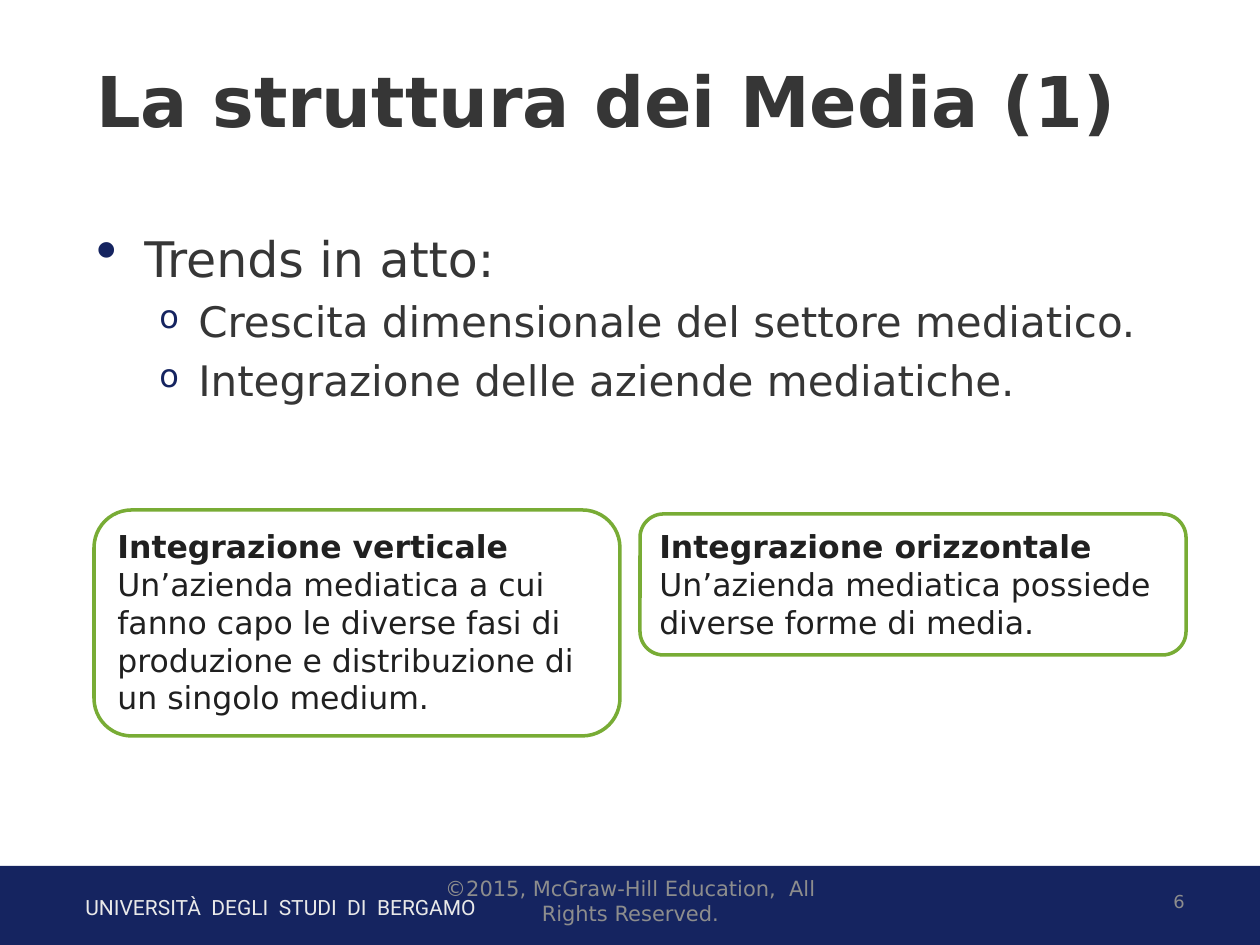
from lxml.etree import SubElement
from pptx import Presentation
from pptx.dml.color import RGBColor
from pptx.enum.shapes import MSO_SHAPE
from pptx.enum.text import MSO_ANCHOR, PP_ALIGN
from pptx.oxml.ns import qn
from pptx.util import Emu, Pt

NAVY = RGBColor(0x15, 0x24, 0x60)
GREEN = RGBColor(0x78, 0xAC, 0x35)
WHITE = RGBColor(0xFF, 0xFF, 0xFF)
CHARCOAL = RGBColor(0x36, 0x36, 0x36)
INK = RGBColor(0x20, 0x20, 0x20)
GREY = RGBColor(0x8D, 0x8D, 0x8D)
PALE = RGBColor(0xE9, 0xE9, 0xE9)

FONT = "DejaVu Sans"
PX_PER_INCH = 126


def px(length):
    return Emu(round(length * 914400 / PX_PER_INCH))


def add_box(page, left, top, width, height, anchor=MSO_ANCHOR.TOP):
    box = page.shapes.add_textbox(px(left), px(top), px(width), px(height))
    box.text_frame.word_wrap = True
    box.text_frame.vertical_anchor = anchor
    return box


def add_panel(page, kind, left, top, width, height, fill, line=None):
    panel = page.shapes.add_shape(kind, px(left), px(top), px(width), px(height))
    panel.shadow.inherit = False
    panel.fill.solid()
    panel.fill.fore_color.rgb = fill
    if line is None:
        panel.line.fill.background()
    else:
        panel.line.color.rgb = line
        panel.line.width = Pt(2)
    return panel


def write(box, text, size=18, color=CHARCOAL, bold=False, font=FONT,
          align=PP_ALIGN.LEFT, first=True, before=0):
    frame = box.text_frame
    para = frame.paragraphs[0] if first else frame.add_paragraph()
    para.alignment = align
    if not first:
        para.space_before = Pt(before)
    span = para.add_run()
    span.text = text
    span.font.name = font
    span.font.size = Pt(size)
    span.font.bold = bold
    span.font.color.rgb = color
    return para


def set_bullet(para, mark, percent, margin, hanging):
    properties = para._p.get_or_add_pPr()
    properties.set("marL", str(px(margin)))
    properties.set("indent", str(-px(hanging)))
    color = SubElement(properties, qn("a:buClr"))
    SubElement(color, qn("a:srgbClr")).set("val", str(NAVY))
    SubElement(properties, qn("a:buSzPct")).set("val", str(percent * 1000))
    SubElement(properties, qn("a:buChar")).set("char", mark)


def add_title(page, left, top, width, height, text):
    box = add_box(page, left, top, width, height, MSO_ANCHOR.MIDDLE)
    write(box, text, size=40, bold=True)


def add_outline(page, left, top, width, height, heading, points):
    box = add_box(page, left, top, width, height)
    set_bullet(write(box, heading, size=28), "•", 122, 48, 48)
    for point in points:
        para = write(box, point, size=24, first=False, before=5)
        para.level = 1
        set_bullet(para, "o", 76, 102, 39)


def add_card(page, left, top, width, height, heading, text):
    card = add_panel(page, MSO_SHAPE.ROUNDED_RECTANGLE,
                     left, top, width, height, WHITE, GREEN)
    card.text_frame.word_wrap = True
    card.text_frame.vertical_anchor = MSO_ANCHOR.TOP
    write(card, heading, color=INK, bold=True)
    write(card, text, color=INK, first=False)


def add_footer(page, left, top, width, height):
    add_panel(page, MSO_SHAPE.RECTANGLE, left, top, width, height, NAVY)
    school = add_box(page, left + 73, top + 22, 733, 38)
    write(school, "UNIVERSITÀ  DEGLI  STUDI  DI  BERGAMO",
          size=12, color=PALE, font="Roboto")
    number = add_box(page, left + 903, top + 10, 294, 50, MSO_ANCHOR.MIDDLE)
    write(number, "6", size=10.2, color=GREY, align=PP_ALIGN.RIGHT)
    rights = add_box(page, left + 431, top + 10, 399, 50, MSO_ANCHOR.MIDDLE)
    write(rights, "©2015, McGraw-Hill Education,  All Rights Reserved.",
          size=12, color=GREY, align=PP_ALIGN.CENTER)


def main():
    deck = Presentation()
    deck.slide_width, deck.slide_height = px(1260), px(945)
    page = deck.slides.add_slide(deck.slide_layouts[6])

    # Footer band
    add_footer(page, 0, 866, 1260, 79)

    # Title and trends
    add_title(page, 84, 32, 1124, 136, "La struttura dei Media (1)")
    add_outline(page, 84, 222, 1124, 620, "Trends in atto:", [
        "Crescita dimensionale del settore mediatico.",
        "Integrazione delle aziende mediatiche.",
    ])

    # Two kinds of integration
    add_card(page, 94, 510, 526, 226, "Integrazione verticale",
             "Un’azienda mediatica a cui fanno capo le diverse fasi di "
             "produzione e distribuzione di un singolo medium.")
    add_card(page, 640, 514, 546, 141, "Integrazione orizzontale",
             "Un’azienda mediatica possiede diverse forme di media.")

    deck.save("out.pptx")


if __name__ == "__main__":
    main()
